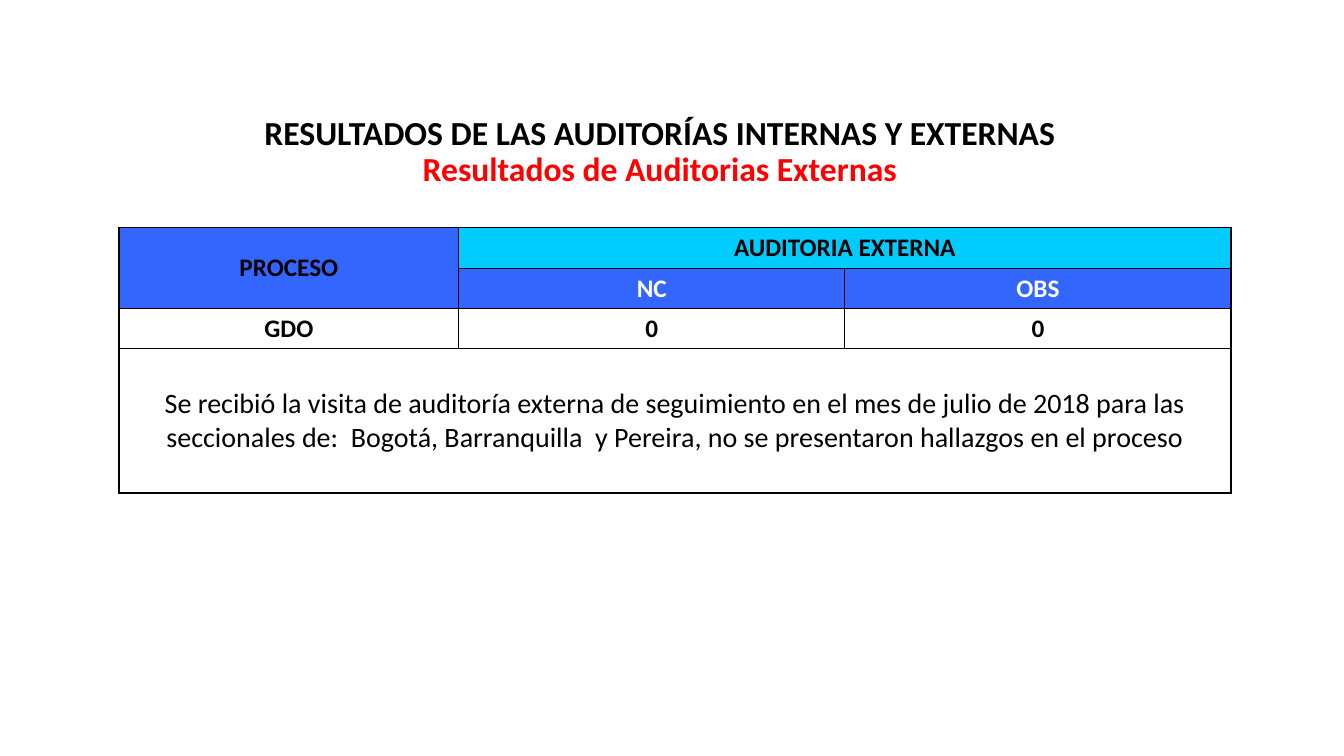
"""Build the slide with the results of the external audits."""
from dataclasses import dataclass

from lxml import etree
from pptx import Presentation
from pptx.dml.color import RGBColor
from pptx.enum.text import MSO_ANCHOR, PP_ALIGN
from pptx.oxml.ns import qn
from pptx.util import Inches, Pt

CENTER = PP_ALIGN.CENTER
BOTTOM = MSO_ANCHOR.BOTTOM
MIDDLE = MSO_ANCHOR.MIDDLE
BLANK_LAYOUT = 6


@dataclass(frozen=True)
class Theme:
    """Colours, font and type sizes of the slide."""
    font: str = "Calibri"
    black: str = "000000"
    white: str = "FFFFFF"
    red: str = "FF0000"
    blue: str = "3366FF"
    cyan: str = "00CCFF"
    title_size: int = 24
    table_size: int = 18
    note_size: int = 20
    border_width: int = 1


THEME = Theme()
COLUMNS = (3.37, 3.83, 3.83)
ROWS = (0.4, 0.4, 0.4, 1.43)
HANGING = Inches(0.38)
TITLE = (
    ("RESULTADOS DE LAS AUDITORÍAS INTERNAS Y EXTERNAS", THEME.black),
    ("Resultados de Auditorias Externas", THEME.red),
)
NOTE = (
    "Se recibió la visita de auditoría externa de seguimiento en el mes de julio de 2018 para las",
    "seccionales de:  Bogotá, Barranquilla  y Pereira, no se presentaron hallazgos en el proceso",
)
MERGES = (((0, 0), (1, 0)), ((0, 1), (0, 2)), ((3, 0), (3, 2)))
CELLS = {
    (0, 0): {"lines": ("PROCESO",), "fill": THEME.blue},
    (0, 1): {"lines": ("AUDITORIA EXTERNA",), "fill": THEME.cyan},
    (1, 1): {"lines": ("NC",), "fill": THEME.blue, "color": THEME.white},
    (1, 2): {"lines": ("OBS",), "fill": THEME.blue, "color": THEME.white},
    (2, 0): {"lines": ("GDO",)},
    (2, 1): {"lines": ("0",)},
    (2, 2): {"lines": ("0",)},
    (3, 0): {"lines": NOTE, "size": THEME.note_size, "bold": False},
}


def format_font(font, size, color, bold=True):
    """Apply the theme font with a size, colour and weight."""
    values = {"name": THEME.font, "size": Pt(size), "bold": bold}
    for name, value in values.items():
        setattr(font, name, value)
    font.color.rgb = RGBColor.from_string(color)


def add_title(slide):
    """Add the centred two-line heading."""
    box = slide.shapes.add_textbox(Inches(1.29), Inches(0.87), Inches(10.51), Inches(1.05))
    frame = box.text_frame
    frame.word_wrap = True
    frame.vertical_anchor = BOTTOM
    paragraph = frame.paragraphs[0]
    paragraph.alignment = CENTER
    paragraph.line_spacing = 0.9
    for index, (text, color) in enumerate(TITLE):
        if index:
            paragraph.add_line_break()
        run = paragraph.add_run()
        run.text = text
        format_font(run.font, THEME.title_size, color)


def set_borders(cell):
    """Draw a solid line on the four sides of a cell."""
    properties = cell._tc.get_or_add_tcPr()
    for position, side in enumerate(("a:lnL", "a:lnR", "a:lnT", "a:lnB")):
        line = etree.Element(qn(side), w=str(Pt(THEME.border_width)))
        fill = etree.SubElement(line, qn("a:solidFill"))
        etree.SubElement(fill, qn("a:srgbClr"), val=THEME.black)
        properties.insert(position, line)


def fill_cell(cell, lines, fill=None, color=THEME.black, size=THEME.table_size, bold=True):
    """Write the lines of a cell and set its fill."""
    if fill:
        cell.fill.solid()
        cell.fill.fore_color.rgb = RGBColor.from_string(fill)
    cell.vertical_anchor = MIDDLE
    cell.text_frame.text = "\n".join(lines)
    for paragraph in cell.text_frame.paragraphs:
        paragraph.alignment = CENTER
        properties = paragraph._p.get_or_add_pPr()
        properties.set("marL", str(HANGING))
        properties.set("indent", str(-HANGING))
        format_font(paragraph.runs[0].font, size, color, bold)


def add_audit_table(slide):
    """Add the table of findings with its closing note."""
    frame = slide.shapes.add_table(
        len(ROWS), len(COLUMNS), Inches(1.18), Inches(2.26),
        Inches(sum(COLUMNS)), Inches(sum(ROWS)))
    table = frame.table
    for column, width in zip(table.columns, COLUMNS):
        column.width = Inches(width)
    for row, height in zip(table.rows, ROWS):
        row.height = Inches(height)
    for cell in table.iter_cells():
        cell.fill.background()
        set_borders(cell)
    for first, last in MERGES:
        table.cell(*first).merge(table.cell(*last))
    for position, content in CELLS.items():
        fill_cell(table.cell(*position), **content)


def main():
    """Build and save the presentation."""
    presentation = Presentation()
    presentation.slide_width = Inches(13.33)
    presentation.slide_height = Inches(7.5)
    slide = presentation.slides.add_slide(presentation.slide_layouts[BLANK_LAYOUT])
    add_title(slide)
    add_audit_table(slide)
    presentation.save("out.pptx")


if __name__ == "__main__":
    main()
